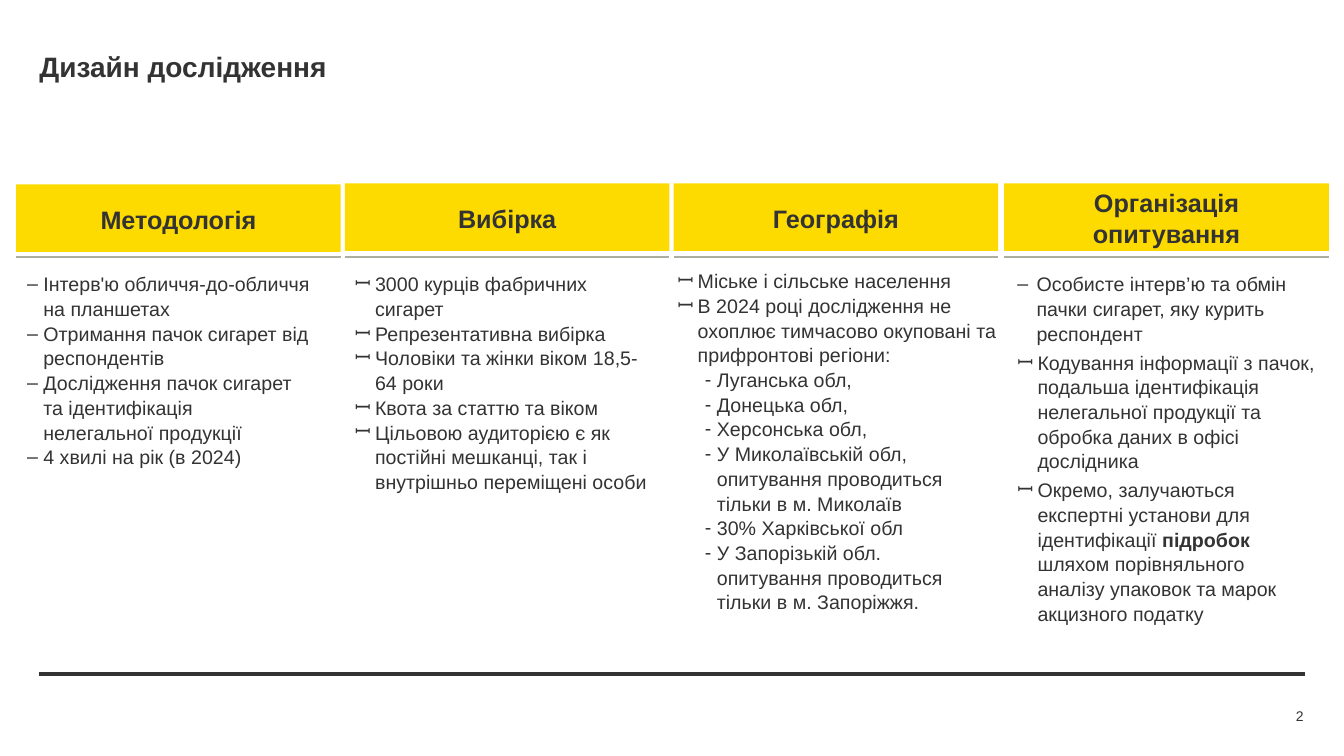
from lxml.etree import SubElement
from pptx import Presentation
from pptx.dml.color import RGBColor
from pptx.enum.shapes import MSO_CONNECTOR, MSO_SHAPE
from pptx.enum.text import MSO_ANCHOR, MSO_AUTO_SIZE, PP_ALIGN
from pptx.oxml.ns import qn
from pptx.util import Inches, Pt

COLORS = {"text": "333333", "header": "FEDB00", "rule": "AEAE9F"}

# Bullet styles: character, left margin, hanging indent
DASH = ("–", 0.16, 0.16)
WIDE_DASH = ("–", 0.19, 0.19)
LONG = ("ꟷ", 0.2, 0.2)
SUB = ("-", 0.39, 0.12)

# Heading, left, header top, body box, body inset, space between items, items
COLUMNS = [
    ("Методологія", 0.16, 1.83, (0.17, 2.64, 3.21, 2.82), (0.1, 0.05), 0, [
        (DASH, "Інтерв'ю обличчя-до-обличчя\vна планшетах"),
        (DASH, "Отримання пачок сигарет від\vреспондентів"),
        (DASH, "Дослідження пачок сигарет\vта ідентифікація\vнелегальної продукції"),
        (DASH, "4 хвилі на рік (в 2024)"),
    ]),
    ("Вибірка", 3.42, 1.82, (3.42, 2.64, 3.21, 3.11), (0.1, 0.05), 0, [
        (LONG, "3000 курців фабричних сигарет"),
        (LONG, "Репрезентативна вибірка"),
        (LONG, "Чоловіки та жінки віком 18,5- 64 роки"),
        (LONG, "Квота за статтю та віком"),
        (LONG, "Цільовою аудиторією є як постійні мешканці, так і "
               "внутрішньо переміщені особи"),
    ]),
    ("Географія", 6.68, 1.82, (6.72, 2.66, 3.18, 3.98), (0, 0), 0, [
        (LONG, "Міське і сільське населення"),
        (LONG, "В 2024 році дослідження не охоплює тимчасово окуповані та "
               "прифронтові регіони:"),
        (SUB, "Луганська обл,"),
        (SUB, "Донецька обл,"),
        (SUB, "Херсонська обл,"),
        (SUB, "У Миколаївській обл,\vопитування проводиться\vтільки в м. Миколаїв"),
        (SUB, "30% Харківської обл"),
        (SUB, "У Запорізькій обл.\vопитування проводиться\vтільки в м. Запоріжжя."),
    ]),
    ("Організація\vопитування", 9.96, 1.82, (9.99, 2.64, 3.17, 3.76), (0.1, 0.05), 3, [
        (WIDE_DASH, "Особисте інтерв’ю та обмін пачки сигарет, яку курить респондент"),
        (LONG, "Кодування інформації з пачок, подальша ідентифікація нелегальної "
               "продукції та обробка даних в офісі дослідника"),
        (LONG, "Окремо, залучаються експертні установи для ідентифікації *підробок* "
               "шляхом порівняльного аналізу упаковок та марок акцизного податку"),
    ]),
]


def write(sp, items, size=14, bold=False, align=PP_ALIGN.LEFT,
          anchor=MSO_ANCHOR.TOP, inset=(0, 0), gap=0):
    """Fill a shape with (bullet, text) items; *stars* switch bold, \\v breaks a line."""
    tf = sp.text_frame
    tf.word_wrap = True
    tf.auto_size = MSO_AUTO_SIZE.NONE
    tf.vertical_anchor = anchor
    tf.margin_left = tf.margin_right = Inches(inset[0])
    tf.margin_top = tf.margin_bottom = Inches(inset[1])
    for n, (bullet, text) in enumerate(items):
        p = tf.add_paragraph() if n else tf.paragraphs[0]
        p.alignment = align
        p.line_spacing = 1.05
        p.space_before = Pt(gap if n else 0)
        p.space_after = Pt(0)
        pPr = p._p.get_or_add_pPr()
        char, margin, hang = bullet or (None, 0, 0)
        pPr.set("marL", str(Inches(margin)))
        pPr.set("indent", str(-Inches(hang)))
        if char:
            SubElement(pPr, qn("a:buChar"), char=char)
        else:
            SubElement(pPr, qn("a:buNone"))
        for i, part in enumerate(text.split("*")):
            for j, line in enumerate(part.split("\v")):
                if j:
                    p.add_line_break()
                r = p.add_run()
                r.text = line
                r.font.name = "Arial"
                r.font.size = Pt(size)
                r.font.bold = bold or i % 2 == 1
                r.font.color.rgb = RGBColor.from_string(COLORS["text"])
        for br in p._p.findall(qn("a:br")):
            SubElement(br, qn("a:rPr"), sz=str(size * 100))


def add_rule(left, right, y, color, width):
    line = s.shapes.add_connector(MSO_CONNECTOR.STRAIGHT, Inches(left), Inches(y),
                                  Inches(right), Inches(y))
    line.line.color.rgb = RGBColor.from_string(COLORS[color])
    line.line.width = Pt(width)
    SubElement(line._element.spPr, qn("a:effectLst"))


prs = Presentation()
prs.slide_width, prs.slide_height = Inches(13.33), Inches(7.5)
s = prs.slides.add_slide(prs.slide_layouts.get_by_name("Comparison"))
title, *bodies = s.placeholders

add_rule(0.39, 12.94, 6.69, "text", 3)

title.left, title.top, title.width, title.height = map(Inches, (0.39, 0.47, 12.54, 0.44))
write(title, [(None, "Дизайн дослідження")], size=20, bold=True)

for body, (heading, left, top, box, inset, gap, items) in zip(bodies, COLUMNS):
    body.left, body.top, body.width, body.height = map(Inches, box)
    write(body, items, inset=inset, gap=gap)
    add_rule(left, left + 3.22, 2.55, "rule", 1)
    header = s.shapes.add_shape(MSO_SHAPE.RECTANGLE, Inches(left), Inches(top),
                                Inches(3.22), Inches(0.67))
    header.shadow.inherit = False
    header.fill.solid()
    header.fill.fore_color.rgb = RGBColor.from_string(COLORS["header"])
    header.line.fill.background()
    write(header, [(None, heading)], size=18, bold=True, align=PP_ALIGN.CENTER,
          anchor=MSO_ANCHOR.MIDDLE)

number = s.shapes.add_textbox(Inches(11.87), Inches(6.99), Inches(1.06), Inches(0.22))
write(number, [(None, "2")], size=10, align=PP_ALIGN.RIGHT, anchor=MSO_ANCHOR.MIDDLE)

prs.save("out.pptx")
